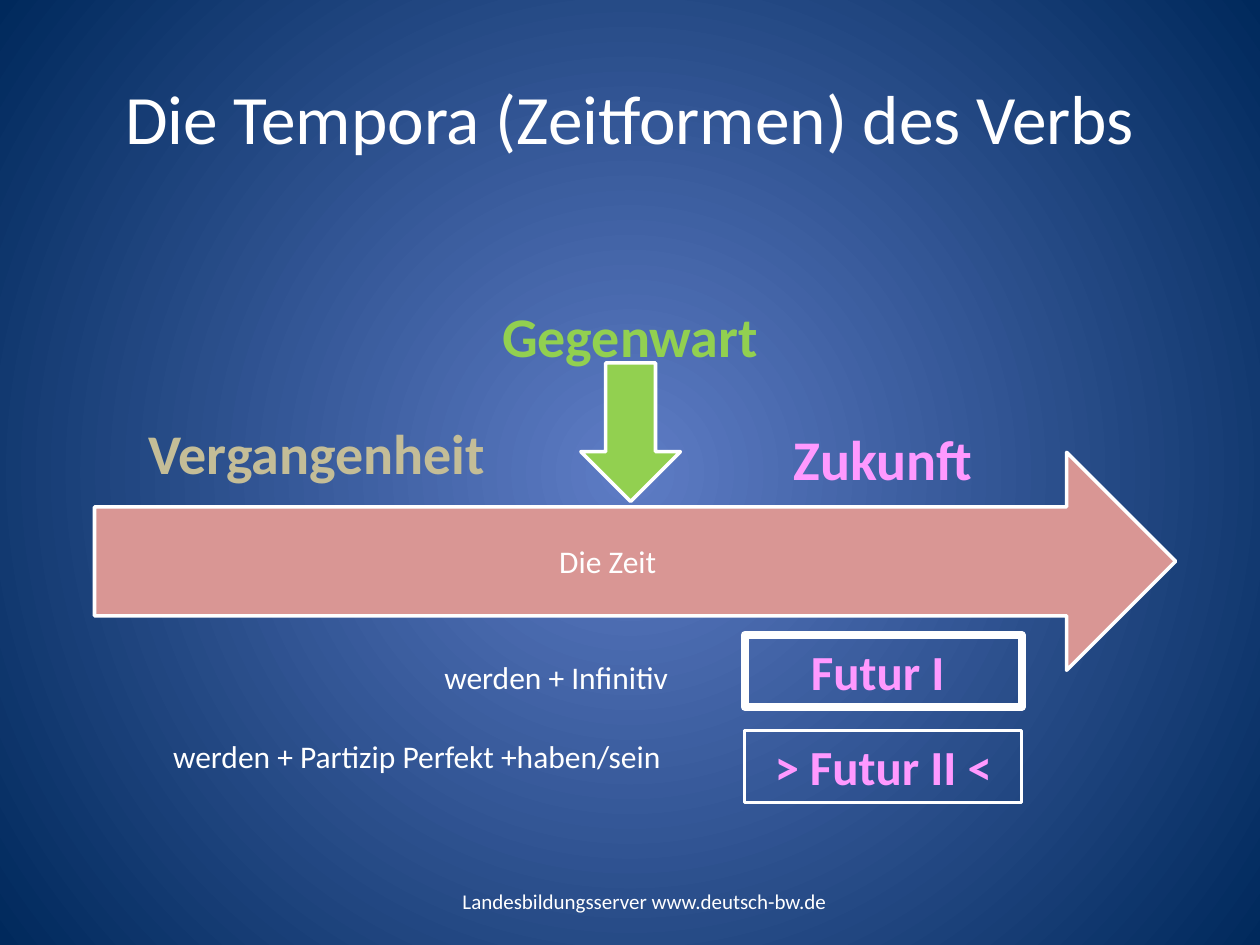
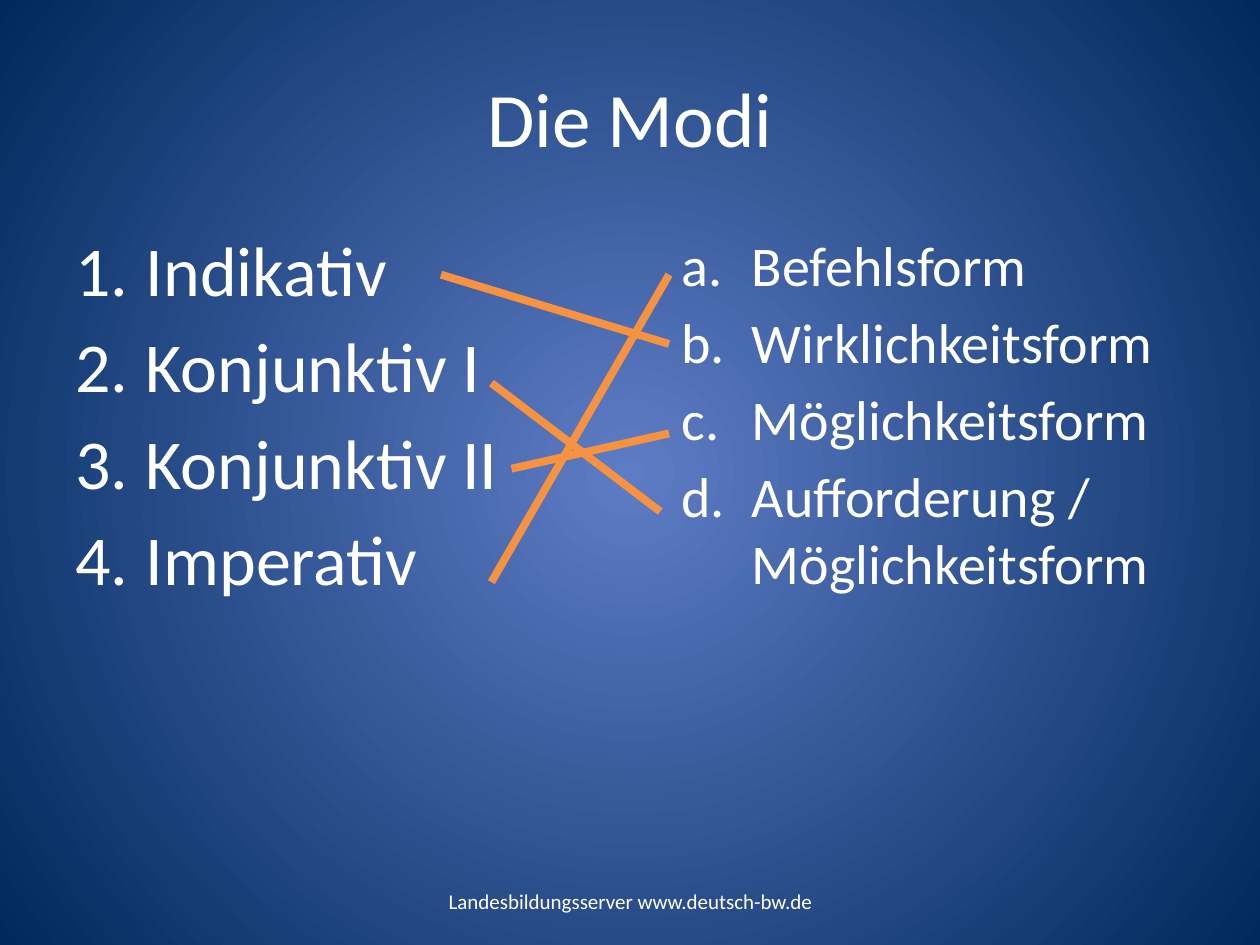
from dataclasses import dataclass

import lxml.etree
import pptx
import pptx.dml.color
import pptx.enum.dml
import pptx.enum.shapes
import pptx.enum.text
import pptx.oxml.ns
import pptx.util
from pptx.util import Inches

ALIGN = pptx.enum.text.PP_ALIGN
ANCHOR = pptx.enum.text.MSO_ANCHOR
SHAPE = pptx.enum.shapes.MSO_SHAPE
qn = pptx.oxml.ns.qn

FONT = "Calibri"
FOOTER = "Landesbildungsserver www.deutsch-bw.de"
COLORS = {
    "glow": "5E7CC5",
    "edge": "00295C",
    "text": "FFFFFF",
    "time": "D99694",
    "present": "92D050",
    "past": "C4BD97",
    "future": "FF99FF",
    "match": "F69240",
}


@dataclass(frozen=True)
class Box:
    left: float
    top: float
    width: float
    height: float

    def lengths(self) -> tuple:
        return tuple(Inches(v) for v in (self.left, self.top, self.width, self.height))


@dataclass(frozen=True)
class Label:
    text: str
    box: Box
    size: float
    color: str = "text"
    bold: bool = False
    align: ALIGN = ALIGN.CENTER
    anchor: ANCHOR = ANCHOR.TOP


@dataclass(frozen=True)
class Figure:
    kind: SHAPE
    box: Box
    line_width: float
    fill: str | None = None


@dataclass(frozen=True)
class NumberedList:
    items: tuple[str, ...]
    box: Box
    size: float
    numbering: str


@dataclass(frozen=True)
class Match:
    start: tuple[float, float]
    end: tuple[float, float]


TIME_ARROW = Figure(SHAPE.RIGHT_ARROW, Box(0.75, 3.59, 8.58, 1.73), 2, "time")
PRESENT_ARROW = Figure(SHAPE.DOWN_ARROW, Box(4.61, 2.88, 0.79, 1.1), 2, "present")
FUTURE_2_FRAME = Figure(SHAPE.RECTANGLE, Box(5.91, 5.8, 2.2, 0.57), 1.5)
FUTURE_1_FRAME = Figure(SHAPE.RECTANGLE, Box(5.91, 5.04, 2.2, 0.57), 4.5)

TIME_LABEL = Label("Die Zeit", TIME_ARROW.box, 18, anchor=ANCHOR.MIDDLE)
FUTURE_2_LABEL = Label("> Futur II <", FUTURE_2_FRAME.box, 28, "future", True)
FUTURE_1_LABEL = Label("Futur I ", FUTURE_1_FRAME.box, 28, "future", True)

PERIODS = (
    Label("Gegenwart", Box(3.84, 2.34, 2.32, 0.64), 32, "present", True),
    Label("Vergangenheit", Box(1.06, 3.27, 2.91, 0.64), 32, "past", True),
    Label("Zukunft", Box(5.55, 3.32, 2.91, 0.64), 32, "future", True),
)
FORMATION_RULES = (
    Label("werden + Infinitiv", Box(1.38, 5.17, 4.02, 0.4), 18, align=ALIGN.RIGHT),
    Label("werden + Partizip Perfekt +haben/sein ", Box(0.91, 5.8, 4.49, 0.4), 18,
          align=ALIGN.RIGHT),
)
MOODS = NumberedList(
    ("Indikativ", "Konjunktiv I", "Konjunktiv II", "Imperativ"),
    Box(0.5, 1.75, 4.11, 4.95), 40, "arabicPeriod")
MEANINGS = NumberedList(
    ("Befehlsform", "Wirklichkeitsform", "Möglichkeitsform",
     "Aufforderung / Möglichkeitsform"),
    Box(5.31, 1.78, 4.41, 4.95), 32, "alphaLcPeriod")
MATCHES = (
    Match((3.5, 2.18), (5.31, 2.73)),
    Match((3.9, 3.04), (5.24, 4.06)),
    Match((4.06, 3.72), (5.31, 3.44)),
    Match((3.9, 4.62), (5.31, 2.18)),
)


def rgb(name: str) -> pptx.dml.color.RGBColor:
    return pptx.dml.color.RGBColor.from_string(COLORS[name])


def set_background(master) -> None:
    """Give every slide a radial gradient that glows from the centre."""
    fill = master.background.fill
    fill.gradient()
    for stop, name, position in zip(fill.gradient_stops, ("glow", "edge"), (0, 1)):
        stop.color.rgb = rgb(name)
        stop.position = position
    gradient = master.element.find(".//" + qn("p:bgPr")).find(qn("a:gradFill"))
    gradient.remove(gradient.find(qn("a:lin")))
    radial = lxml.etree.SubElement(gradient, qn("a:path"), {"path": "circle"})
    lxml.etree.SubElement(radial, qn("a:fillToRect"), dict.fromkeys("ltrb", "50000"))


def format_paragraph(paragraph, size: float, color: str = "text", bold: bool = False) -> None:
    font = paragraph.font
    font.name = FONT
    font.size = pptx.util.Pt(size)
    font.bold = bold
    font.color.rgb = rgb(color)


def write_label(frame, label: Label) -> None:
    frame.word_wrap = True
    frame.auto_size = pptx.enum.text.MSO_AUTO_SIZE.NONE
    frame.vertical_anchor = label.anchor
    paragraph = frame.paragraphs[0]
    paragraph.text = label.text
    paragraph.alignment = label.align
    format_paragraph(paragraph, label.size, label.color, label.bold)


def add_label(slide, label: Label) -> None:
    write_label(slide.shapes.add_textbox(*label.box.lengths()).text_frame, label)


def add_figure(slide, figure: Figure, label: Label | None = None) -> None:
    shape = slide.shapes.add_shape(figure.kind, *figure.box.lengths())
    shape.shadow.inherit = False
    if figure.fill:
        shape.fill.solid()
        shape.fill.fore_color.rgb = rgb(figure.fill)
    else:
        shape.fill.background()
    shape.line.color.rgb = rgb("text")
    shape.line.width = pptx.util.Pt(figure.line_width)
    if label:
        write_label(shape.text_frame, label)


def add_numbered_list(slide, content: NumberedList) -> None:
    frame = slide.shapes.add_textbox(*content.box.lengths()).text_frame
    frame.word_wrap = True
    indent = Inches(0.56)
    for index, item in enumerate(content.items):
        paragraph = frame.add_paragraph() if index else frame.paragraphs[0]
        paragraph.text = item
        paragraph.space_before = pptx.util.Pt(round(content.size * 0.175, 1))
        format_paragraph(paragraph, content.size)
        properties = paragraph._p.get_or_add_pPr()
        properties.set("marL", str(indent))
        properties.set("indent", str(-indent))
        numbering = properties.makeelement(qn("a:buAutoNum"), {"type": content.numbering})
        properties.find(qn("a:defRPr")).addprevious(numbering)


def add_match(slide, match: Match) -> None:
    connector = slide.shapes.add_connector(
        pptx.enum.shapes.MSO_CONNECTOR.STRAIGHT,
        *(Inches(v) for v in match.start + match.end))
    connector.line.color.rgb = rgb("match")
    connector.line.width = pptx.util.Pt(4.5)
    lxml.etree.SubElement(connector._element.spPr, qn("a:effectLst"))


def add_titled_slide(prs, title: str, title_size: float, footer_width: float):
    slide = prs.slides.add_slide(prs.slide_layouts[5])
    heading = Label(title, Box(0.5, 0.3, 9, 1.25), title_size, anchor=ANCHOR.MIDDLE)
    placeholder = slide.shapes.title
    (placeholder.left, placeholder.top,
     placeholder.width, placeholder.height) = heading.box.lengths()
    write_label(placeholder.text_frame, heading)
    add_label(slide, Label(FOOTER, Box(3.42, 6.95, footer_width, 0.4), 12,
                           anchor=ANCHOR.MIDDLE))
    return slide


def build_tenses(prs) -> None:
    slide = add_titled_slide(prs, "Die Tempora (Zeitformen) des Verbs", 39.6, 3.39)
    add_figure(slide, TIME_ARROW, TIME_LABEL)
    add_figure(slide, PRESENT_ARROW)
    for period in PERIODS:
        add_label(slide, period)
    add_figure(slide, FUTURE_2_FRAME, FUTURE_2_LABEL)
    add_figure(slide, FUTURE_1_FRAME, FUTURE_1_LABEL)
    for rule in FORMATION_RULES:
        add_label(slide, rule)


def build_moods(prs) -> None:
    slide = add_titled_slide(prs, "Die Modi", 44, 3.17)
    add_numbered_list(slide, MOODS)
    add_numbered_list(slide, MEANINGS)
    for match in MATCHES:
        add_match(slide, match)


def main() -> None:
    prs = pptx.Presentation()
    prs.slide_width, prs.slide_height = Inches(10), Inches(7.5)
    set_background(prs.slide_master)
    build_tenses(prs)
    build_moods(prs)
    prs.save("out.pptx")


if __name__ == "__main__":
    main()
